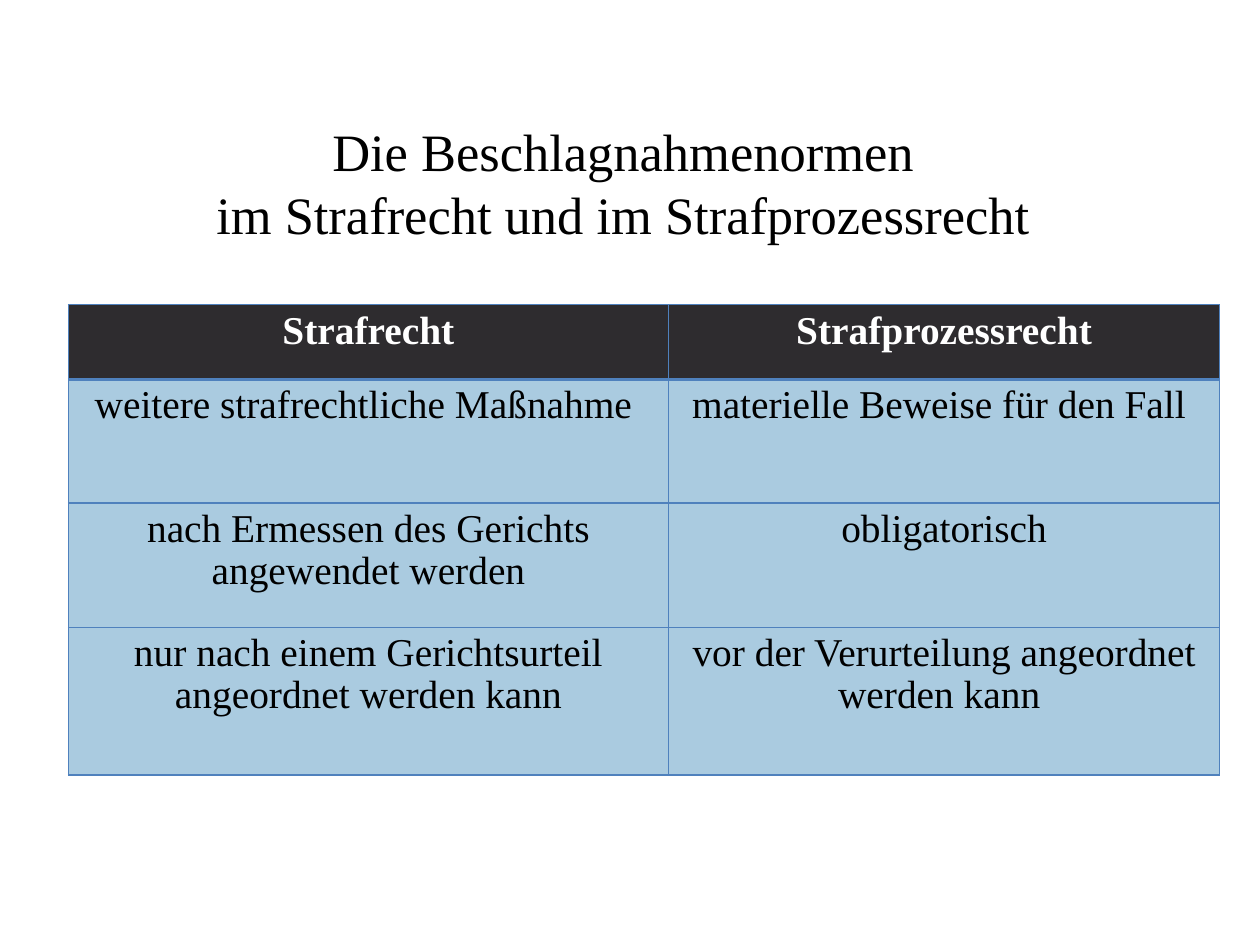
from copy import deepcopy
from dataclasses import dataclass

from lxml.etree import SubElement
from pptx import Presentation
from pptx.dml.color import RGBColor as Rgb
from pptx.enum.text import MSO_ANCHOR as Anchor, MSO_AUTO_SIZE as AutoSize, PP_ALIGN as Align
from pptx.oxml.ns import qn
from pptx.util import Inches, Pt


@dataclass(frozen=True)
class Theme:
    """Colours, typeface and type sizes of the slide."""
    font: str = "Times New Roman"
    title_size: int = 32
    cell_size: int = 24
    ink: str = "000000"
    header_ink: str = "FFFFFF"
    header_fill: str = "2E2C2F"
    body_fill: str = "AACBE0"
    border: str = "4F81BD"


THEME = Theme()
WIDTH, HEIGHT = 10.67, 8
COLUMNS = (5.08, 4.67)
ROWS = (0.63, 1.05, 1.05, 1.25)
TITLE = "Die Beschlagnahmenormen \vim Strafrecht und im Strafprozessrecht "
NORMS = (
    ("Strafrecht", "Strafprozessrecht"),
    ("weitere strafrechtliche Maßnahme ", "materielle Beweise für den Fall "),
    ("nach Ermessen des Gerichts angewendet werden", "obligatorisch"),
    ("nur nach einem Gerichtsurteil angeordnet werden kann",
     "vor der Verurteilung angeordnet werden kann "),
)


def write(frame, text, size, color=THEME.ink, bold=False, spacing=None):
    """Write one centred paragraph, giving line breaks the format of the runs."""
    paragraph = frame.paragraphs[0]
    paragraph.text = text
    paragraph.alignment = Align.CENTER
    paragraph.line_spacing = spacing
    for run in paragraph.runs:
        font = run.font
        font.name, font.size, font.bold = THEME.font, Pt(size), bold
        font.color.rgb = Rgb.from_string(color)
    for line_break in paragraph._p.findall(qn("a:br")):
        line_break.insert(0, deepcopy(paragraph.runs[0]._r.rPr))


def set_borders(cell, bottom=1):
    """Draw the four cell borders ahead of the fill in the cell properties."""
    properties = cell._tc.get_or_add_tcPr()
    for side, width in (("L", 1), ("R", 1), ("T", 1), ("B", bottom)):
        line = SubElement(properties, qn(f"a:ln{side}"), w=str(Pt(width)))
        SubElement(SubElement(line, qn("a:solidFill")), qn("a:srgbClr"), val=THEME.border)


def add_title(slide):
    """Place and fill the title placeholder."""
    title = slide.shapes.title
    title.left, title.top = Inches(WIDTH * 0.13), Inches(HEIGHT * 0.115)
    title.width, title.height = Inches(WIDTH * 0.74), Inches(HEIGHT * 0.156)
    frame = title.text_frame
    frame.word_wrap, frame.auto_size = True, AutoSize.NONE
    frame.vertical_anchor = Anchor.MIDDLE
    write(frame, TITLE, THEME.title_size)


def add_norms_table(slide):
    """Add the comparison table with a dark header row."""
    table = slide.shapes.add_table(
        len(ROWS), len(COLUMNS), Inches(0.58), Inches(2.58),
        Inches(sum(COLUMNS)), Inches(sum(ROWS))).table
    for column, width in zip(table.columns, COLUMNS):
        column.width = Inches(width)
    for row, height, texts in zip(table.rows, ROWS, NORMS):
        row.height = Inches(height)
        header = texts is NORMS[0]
        for cell, text in zip(row.cells, texts):
            set_borders(cell, bottom=2 if header else 1)
            cell.fill.solid()
            cell.fill.fore_color.rgb = Rgb.from_string(
                THEME.header_fill if header else THEME.body_fill)
            write(cell.text_frame, text, THEME.cell_size, bold=header, spacing=0.96,
                  color=THEME.header_ink if header else THEME.ink)


def main():
    """Build and save the slide."""
    presentation = Presentation()
    presentation.slide_width, presentation.slide_height = Inches(WIDTH), Inches(HEIGHT)
    slide = presentation.slides.add_slide(presentation.slide_layouts[5])
    add_norms_table(slide)
    add_title(slide)
    presentation.save("out.pptx")


if __name__ == "__main__":
    main()
